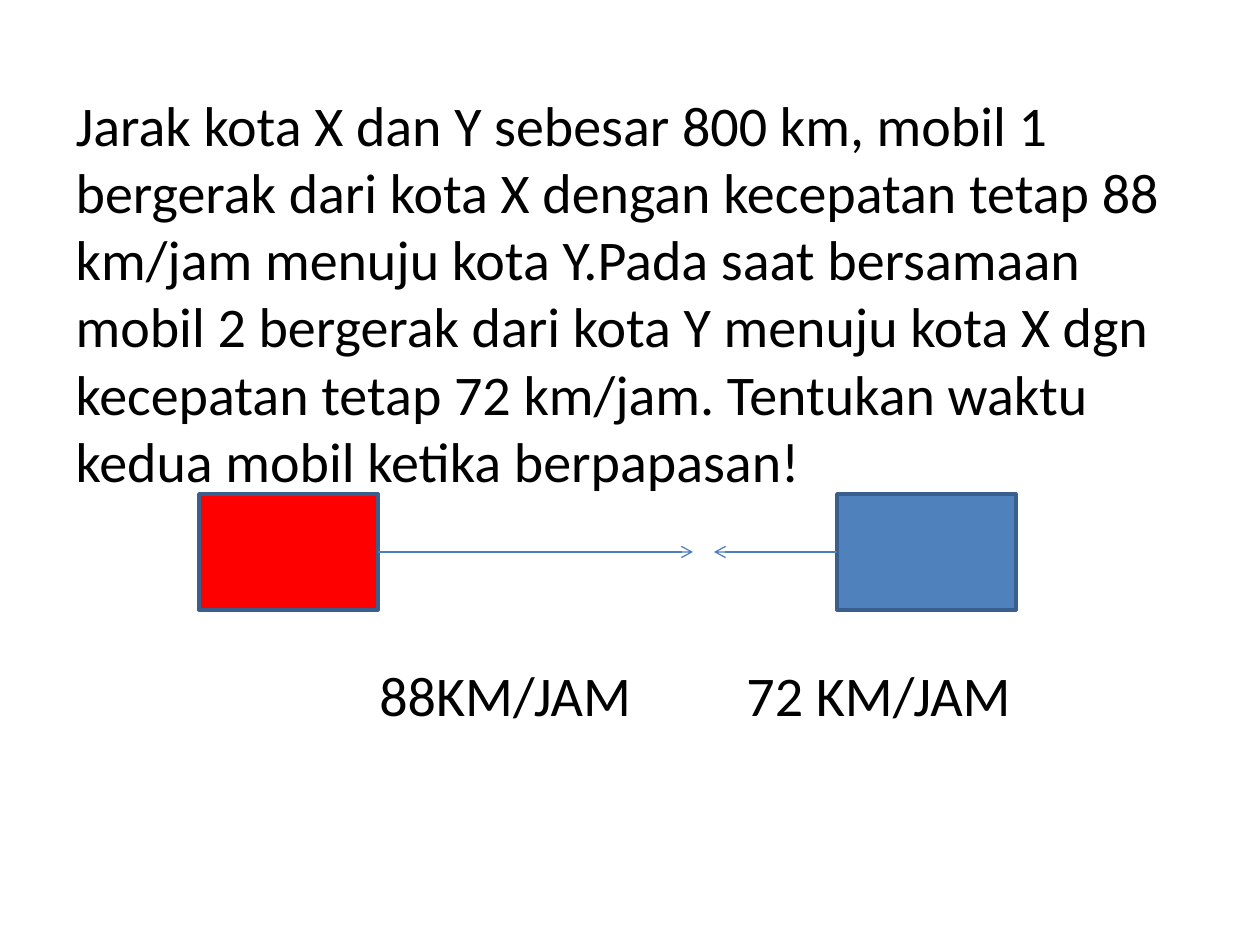
"""Build a slide with a motion problem about two cars driving towards each other."""
from lxml.etree import SubElement
from pptx import Presentation
from pptx.dml.color import RGBColor
from pptx.enum.shapes import MSO_CONNECTOR as CONN, MSO_SHAPE as SHAPE
from pptx.enum.text import MSO_AUTO_SIZE as AUTO, PP_ALIGN as ALIGN
from pptx.oxml.ns import qn
from pptx.util import Emu, Pt

BLACK = RGBColor(0x00, 0x00, 0x00)
RED = RGBColor(0xFF, 0x00, 0x00)
BLUE = RGBColor(0x4F, 0x81, 0xBD)
EDGE = RGBColor(0x3A, 0x5F, 0x8C)
ARROW = RGBColor(0x4B, 0x7E, 0xBC)


def px(n):
    return Emu(round(n * 914400 / 126))


def write(tf, text):
    tf.word_wrap = True
    tf.auto_size = AUTO.NONE
    tf.text = text
    p = tf.paragraphs[0]
    pPr = p._p.get_or_add_pPr()
    pPr.set("marL", "0")
    pPr.set("indent", "0")
    SubElement(pPr, qn("a:buNone"))
    p.alignment = ALIGN.LEFT
    p.space_before = Pt(0)
    font = p.runs[0].font
    font.name = "Calibri"
    font.size = Pt(32)
    font.color.rgb = BLACK


prs = Presentation()
prs.slide_width, prs.slide_height = px(1260), px(945)
s = prs.slides.add_slide(prs.slide_layouts[1])
title = s.shapes.title.element
title.getparent().remove(title)

body = s.placeholders[1]
body.left, body.top, body.width, body.height = px(63), px(84), px(1134), px(760)
write(
    body.text_frame,
    "Jarak kota X dan Y sebesar 800 km, mobil 1 bergerak dari kota X dengan "
    "kecepatan tetap 88 km/jam menuju kota Y.Pada saat bersamaan mobil 2 "
    "bergerak dari kota Y menuju kota X dgn kecepatan tetap 72 km/jam. "
    "Tentukan waktu kedua mobil ketika berpapasan!",
)

for left, speed in [(367, "88KM/JAM"), (734, "72 KM/JAM")]:
    label = s.shapes.add_textbox(px(left), px(654), px(320), px(80))
    write(label.text_frame, speed)

for left, color, side, tip in [(837, BLUE, 1, 714), (199, RED, 3, 693)]:
    car = s.shapes.add_shape(SHAPE.RECTANGLE, px(left), px(494), px(179), px(116))
    car.shadow.inherit = False
    car.fill.solid()
    car.fill.fore_color.rgb = color
    car.line.color.rgb = EDGE
    car.line.width = Pt(2)

    arrow = s.shapes.add_connector(CONN.STRAIGHT, px(left), px(552), px(tip), px(552))
    arrow.begin_connect(car, side)
    arrow.line.color.rgb = ARROW
    arrow.line.width = Pt(0.75)
    SubElement(arrow.line._get_or_add_ln(), qn("a:tailEnd"), type="arrow")
    SubElement(arrow._element.spPr, qn("a:effectLst"))

prs.save("out.pptx")
